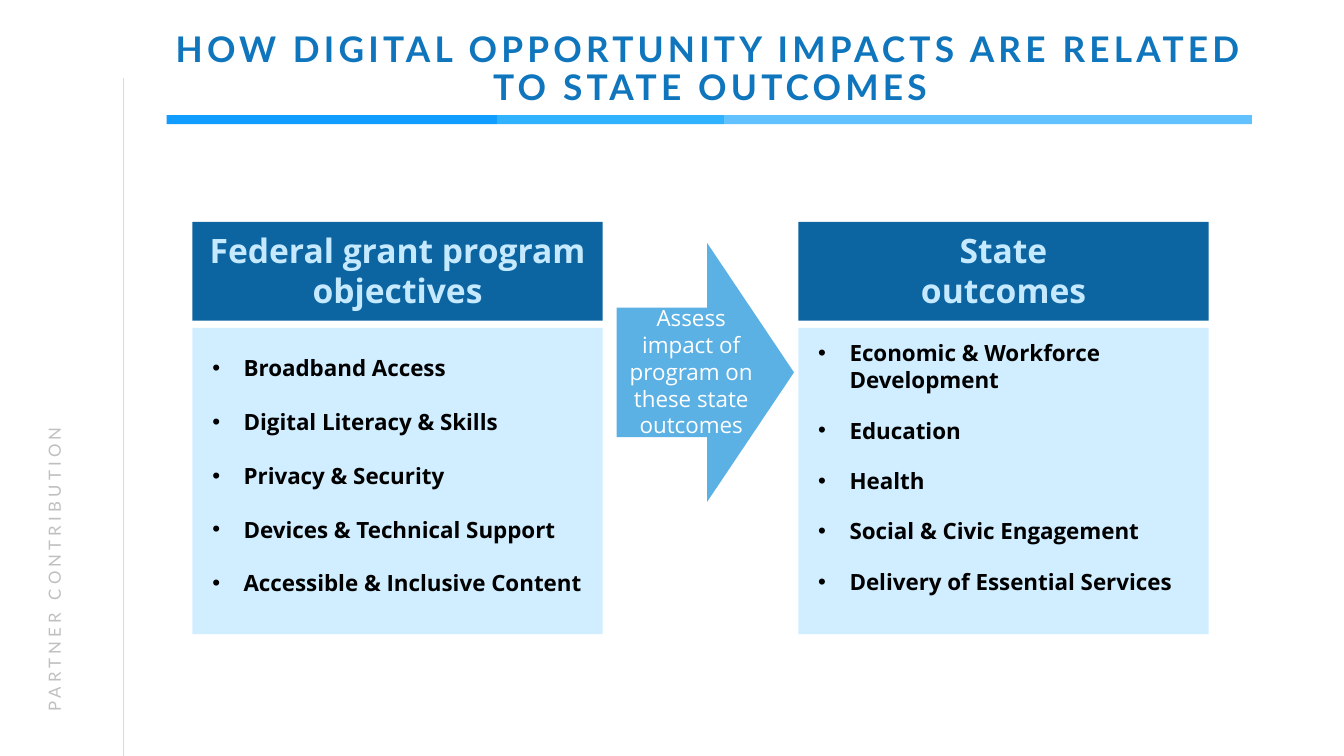
"""Build the slide that relates digital opportunity impacts to state outcomes."""
from dataclasses import dataclass

from lxml import etree
from pptx import Presentation
from pptx import util as u
from pptx.dml.color import RGBColor
from pptx.enum import shapes, text
from pptx.oxml.ns import qn


@dataclass(frozen=True)
class Theme:
    """Colours, fonts and type sizes."""
    title: str = "0F75BC"
    muted: str = "BFBFBF"
    hairline: str = "D9D9D9"
    header: str = "0C64A0"
    header_text: str = "C5EAFF"
    body: str = "A3DEFF"
    body_text: str = "000000"
    arrow: str = "5CB1E4"
    arrow_text: str = "FFFFFF"
    rule: tuple[str, ...] = ("119DFF", "31B2FF", "62C1FF")
    heading_font: str = "Lato"
    text_font: str = "Open Sans"
    title_size: float = 25.2
    header_size: float = 24
    text_size: float = 16
    label_size: float = 12


@dataclass(frozen=True)
class Area:
    """A rectangle in centimetres."""
    left: float
    top: float
    width: float
    height: float

    def lengths(self) -> tuple[u.Length, ...]:
        """Return the four lengths for a shape call."""
        return tuple(u.Cm(n) for n in (self.left, self.top, self.width, self.height))


@dataclass(frozen=True)
class Style:
    """The look of one text box."""
    font: str
    size: float
    color: str
    bold: bool = False
    centered: bool = True
    tracking: float = 0


@dataclass(frozen=True)
class Panel:
    """A headed column of bullet points."""
    left: float
    heading: str
    items: str
    items_top: float
    gap: float


THEME = Theme()
TITLE = Style(THEME.heading_font, THEME.title_size, THEME.title, True, tracking=3)
LABEL = Style(THEME.heading_font, THEME.label_size, THEME.muted, centered=False, tracking=3)
HEADER = Style(THEME.text_font, THEME.header_size, THEME.header_text, True)
BULLETS = Style(THEME.text_font, THEME.text_size, THEME.body_text, True, False)
ARROW = Style(THEME.text_font, THEME.text_size, THEME.arrow_text)

PANEL_WIDTH = 10.34
BODY_BOTTOM = 15.98
BULLET_MARGIN = 0.25
BULLET_INDENT = 0.79
RULE_LEFT = 4.2
RULE_WIDTHS = (8.33, 5.72, 13.3)

PANELS = (
    Panel(4.85, "Federal grant program objectives",
          "Broadband Access\nDigital Literacy & Skills\nPrivacy & Security\n"
          "Devices & Technical Support\nAccessible & Inclusive Content", 8.81, 19.2),
    Panel(20.12, "State\noutcomes",
          "Economic & Workforce Development\nEducation\nHealth\n"
          "Social & Civic Engagement\nDelivery of Essential Services", 8.43, 16.8),
)


def add_block(page, area: Area, color: str, kind=shapes.MSO_SHAPE.RECTANGLE):
    """Add a filled shape without outline or shadow."""
    block = page.shapes.add_shape(kind, *area.lengths())
    block.shadow.inherit = False
    block.fill.solid()
    block.fill.fore_color.rgb = RGBColor.from_string(color)
    block.line.fill.background()
    return block


def add_words(page, area: Area, words: str, style: Style):
    """Add a wrapping text box in one style."""
    box = page.shapes.add_textbox(*area.lengths())
    frame = box.text_frame
    frame.word_wrap = True
    frame.text = words
    for para in frame.paragraphs:
        para.alignment = text.PP_ALIGN.CENTER if style.centered else text.PP_ALIGN.LEFT
        for span in para.runs:
            span.font.name = style.font
            span.font.size = u.Pt(style.size)
            span.font.bold = style.bold
            span.font.color.rgb = RGBColor.from_string(style.color)
            if style.tracking:
                span.font._element.set("spc", str(round(style.tracking * 100)))
    return box


def add_bullets(box, gap: float) -> None:
    """Turn every paragraph of a box into a spaced bullet point."""
    indent = u.Cm(BULLET_INDENT)
    for para in box.text_frame.paragraphs:
        para.space_after = u.Pt(gap)
        properties = para._p.get_or_add_pPr()
        properties.set("marL", str(indent))
        properties.set("indent", str(-indent))
        etree.SubElement(properties, qn("a:buFont"), typeface="Arial")
        etree.SubElement(properties, qn("a:buChar"), char="•")


def add_title(page) -> None:
    """Add the title and the three-part rule below it."""
    left = RULE_LEFT
    for width, color in zip(RULE_WIDTHS, THEME.rule):
        add_block(page, Area(left, 2.9, width, 0.23), color)
        left += width
    box = add_words(page, Area(4.11, 0.58, 27.58, 2.26),
                    "HOW DIGITAL OPPORTUNITY IMPACTS ARE RELATED TO STATE OUTCOMES", TITLE)
    frame = box.text_frame
    frame.vertical_anchor = text.MSO_ANCHOR.MIDDLE
    frame.margin_left = frame.margin_right = frame.margin_bottom = 0
    frame.paragraphs[0].line_spacing = 0.9


def add_side_label(page) -> None:
    """Add the hairline and the turned label at the left edge."""
    line = page.shapes.add_connector(
        shapes.MSO_CONNECTOR.STRAIGHT, u.Cm(3.1), u.Cm(19.05), u.Cm(3.1), u.Cm(1.96))
    line.line.color.rgb = RGBColor.from_string(THEME.hairline)
    line.line.width = u.Pt(0.5)
    etree.SubElement(line._element.spPr, qn("a:effectLst"))
    box = add_words(page, Area(-6.15, 10.03, 15.29, 1.02), "PARTNER CONTRIBUTION", LABEL)
    box.rotation = 270


def add_panel(page, panel: Panel) -> None:
    """Add one column with its heading and bullet points."""
    add_block(page, Area(panel.left, 5.59, PANEL_WIDTH, 2.49), THEME.header)
    body = add_block(page, Area(panel.left, 8.26, PANEL_WIDTH, BODY_BOTTOM - 8.26), THEME.body)
    color = body._element.spPr.find(qn("a:solidFill"))[0]
    etree.SubElement(color, qn("a:alpha"), val="50000")
    add_words(page, Area(panel.left, 5.66, PANEL_WIDTH, 2.31), panel.heading, HEADER)
    area = Area(panel.left + BULLET_MARGIN, panel.items_top,
                PANEL_WIDTH - 2 * BULLET_MARGIN, BODY_BOTTOM - panel.items_top)
    add_bullets(add_words(page, area, panel.items, BULLETS), panel.gap)


def add_arrow(page) -> None:
    """Add the arrow between the columns with its caption."""
    arrow = add_block(page, Area(15.54, 6.12, 4.47, 6.53), THEME.arrow,
                      shapes.MSO_SHAPE.RIGHT_ARROW)
    arrow.adjustments[0] = 0.5
    arrow.adjustments[1] = 0.49
    add_words(page, Area(15.39, 7.54, 4.06, 3.68),
              "Assess impact of program on these state outcomes", ARROW)


def main() -> None:
    """Build and save the deck."""
    deck = Presentation()
    deck.slide_width, deck.slide_height = u.Cm(33.87), u.Cm(19.05)
    page = deck.slides.add_slide(deck.slide_layouts[6])
    add_side_label(page)
    add_title(page)
    for panel in PANELS:
        add_panel(page, panel)
    add_arrow(page)
    deck.save("out.pptx")


if __name__ == "__main__":
    main()
